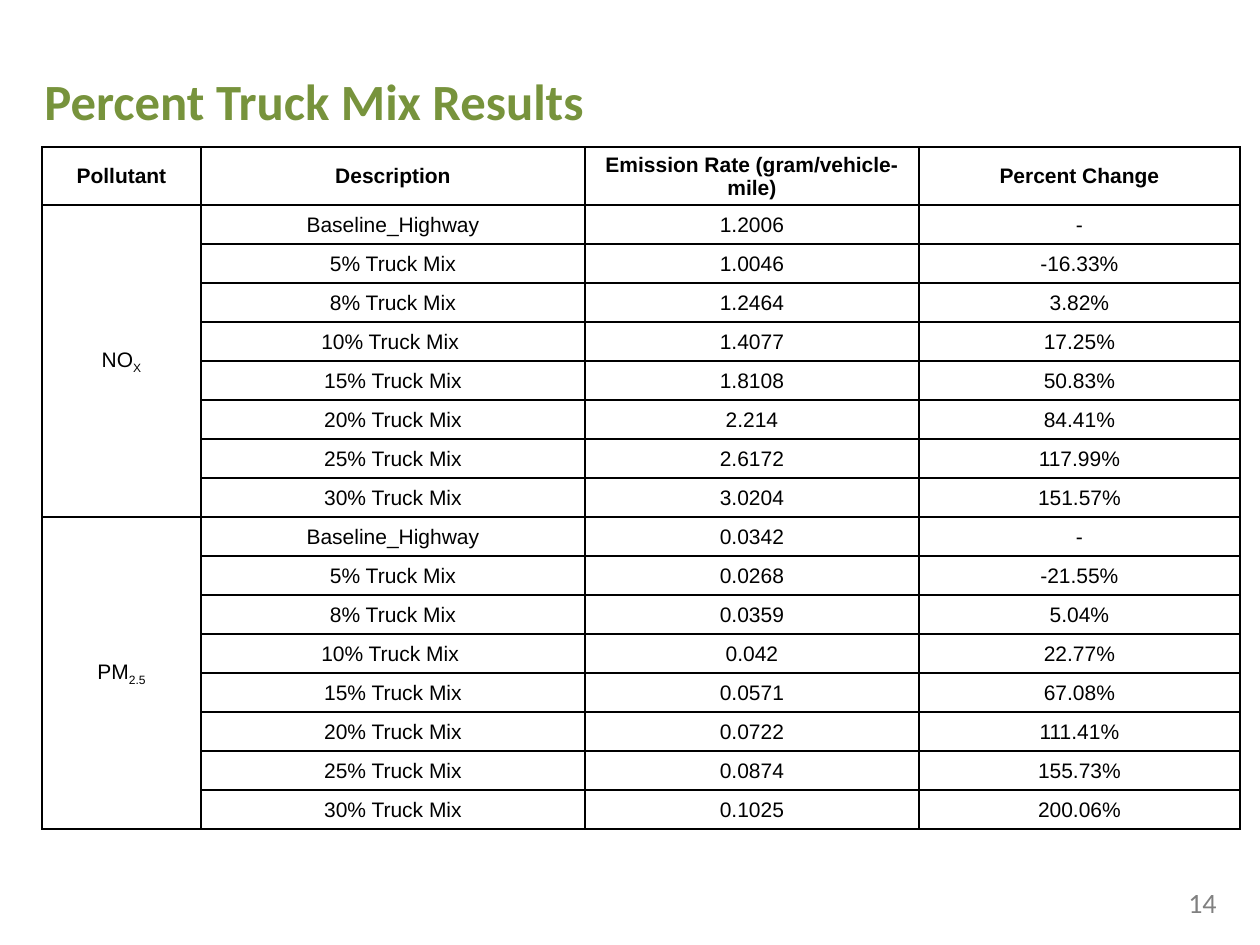
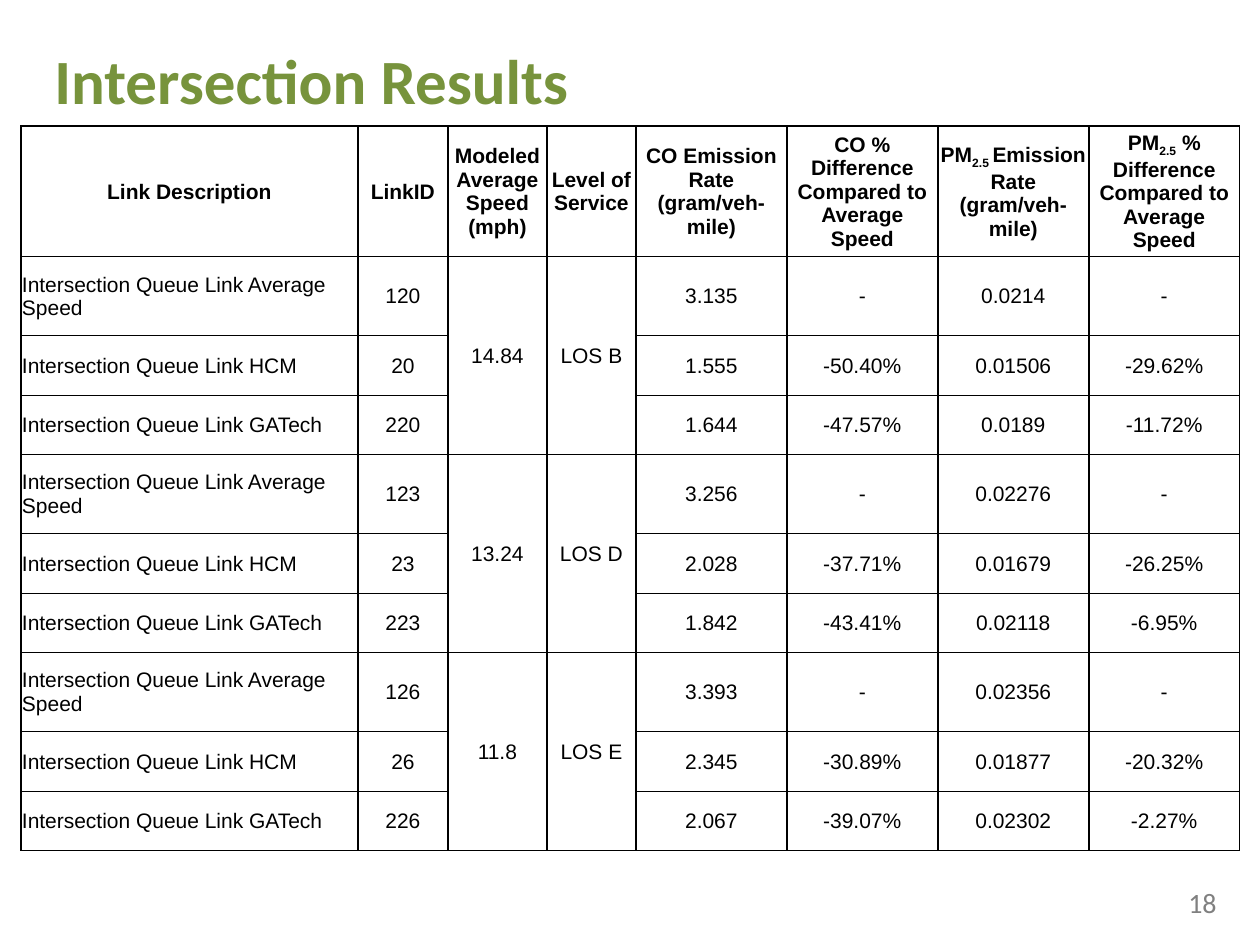
from dataclasses import dataclass
from lxml.etree import SubElement
from pptx import Presentation
from pptx.dml.color import RGBColor
from pptx.enum.text import MSO_ANCHOR as Anchor, PP_ALIGN as Align
from pptx.oxml.ns import qn
from pptx.util import Pt

# Text between tildes is set as a subscript.
TRUCK_MIX = {
    "title": "Percent Truck Mix Results",
    "title_box": (32, 21, 1166, 158),
    "title_size": 29,
    "page_number": "14",
    "origin": (42, 147),
    "columns": [159, 384, 334, 321],
    "rows": [58] + [39] * 16,
    "header": ["Pollutant", "Description",
               "Emission Rate (gram/vehicle-mile)", "Percent Change"],
    "left_columns": (),
    "merged_columns": (0,),
    "group_size": 8,
}
MIXES = ["Baseline_Highway", "5% Truck Mix", "8% Truck Mix", "10% Truck Mix ",
         "15% Truck Mix", "20% Truck Mix", "25% Truck Mix", "30% Truck Mix"]
MIX_RESULTS = {
    "NO~X~": [
        ("1.2006", "-"), ("1.0046", "-16.33%"), ("1.2464", "3.82%"),
        ("1.4077", "17.25%"), ("1.8108", "50.83%"), ("2.214", "84.41%"),
        ("2.6172", "117.99%"), ("3.0204", "151.57%"),
    ],
    "PM~2.5~": [
        ("0.0342", "-"), ("0.0268", "-21.55%"), ("0.0359", "5.04%"),
        ("0.042", "22.77%"), ("0.0571", "67.08%"), ("0.0722", "111.41%"),
        ("0.0874", "155.73%"), ("0.1025", "200.06%"),
    ],
}

INTERSECTION = {
    "title": "Intersection Results",
    "title_box": (42, 0, 1197, 158),
    "title_size": 36,
    "page_number": "18",
    "origin": (21, 126),
    "columns": [337, 90, 99, 89] + [151] * 4,
    "rows": [122] + [79, 60, 59] * 3,
    "header": ["Link Description", "LinkID", "Modeled Average Speed (mph)",
               "Level of Service", "CO Emission Rate (gram/veh-mile)",
               "CO % Difference Compared to Average Speed",
               "PM~2.5 ~Emission Rate (gram/veh-mile)",
               "PM~2.5~ % Difference Compared to Average Speed"],
    "left_columns": (0,),
    "merged_columns": (2, 3),
    "group_size": 3,
}
LINKS = ["Intersection Queue Link Average Speed",
         "Intersection Queue Link HCM", "Intersection Queue Link GATech"]
LINK_RESULTS = {
    ("14.84", "LOS B"): [
        ("120", "3.135", "-", "0.0214", "-"),
        ("20", "1.555", "-50.40%", "0.01506", "-29.62%"),
        ("220", "1.644", "-47.57%", "0.0189", "-11.72%"),
    ],
    ("13.24", "LOS D"): [
        ("123", "3.256", "-", "0.02276", "-"),
        ("23", "2.028", "-37.71%", "0.01679", "-26.25%"),
        ("223", "1.842", "-43.41%", "0.02118", "-6.95%"),
    ],
    ("11.8", "LOS E"): [
        ("126", "3.393", "-", "0.02356", "-"),
        ("26", "2.345", "-30.89%", "0.01877", "-20.32%"),
        ("226", "2.067", "-39.07%", "0.02302", "-2.27%"),
    ],
}

SLIDE_SIZE = (1260, 945)
PAGE_NUMBER_BOX = (1176, 879, 63, 46)
CELL_INSET = 1


@dataclass(frozen=True)
class Theme:
    heading_font: str = "Calibri"
    table_font: str = "Arial"
    green: str = "77933C"
    gray: str = "808080"
    black: str = "000000"
    number_size: int = 16
    table_size: int = 12
    border: int = 1


THEME = Theme()


def px(length):
    return round(length * 914400 / 126)


def add_span(para, text, font, size, color, bold=False):
    span = para.add_run()
    span.text = text
    span.font.name = font
    span.font.size = Pt(size)
    span.font.bold = bold
    span.font.color.rgb = RGBColor.from_string(color)
    return span


def add_label(page, place, text, size, color, bold=False, anchor=Anchor.TOP):
    box = page.shapes.add_textbox(*map(px, place))
    frame = box.text_frame
    frame.word_wrap = True
    frame.vertical_anchor = anchor
    add_span(frame.paragraphs[0], text, THEME.heading_font, size, color, bold)


def add_borders(cell):
    properties = cell._tc.get_or_add_tcPr()
    for index, side in enumerate(("a:lnL", "a:lnR", "a:lnT", "a:lnB")):
        line = SubElement(properties, qn(side), w=str(Pt(THEME.border)))
        fill = SubElement(line, qn("a:solidFill"))
        SubElement(fill, qn("a:srgbClr"), val=THEME.black)
        properties.insert(index, line)


def write_cell(cell, text, bold, align):
    cell.vertical_anchor = Anchor.MIDDLE
    para = cell.text_frame.paragraphs[0]
    para.alignment = align
    for index, part in enumerate(text.split("~")):
        if part:
            span = add_span(para, part, THEME.table_font, THEME.table_size,
                            THEME.black, bold)
            if index % 2:
                span.font._element.set("baseline", "-25000")


def add_results_table(page, content, records):
    columns, rows = content["columns"], content["rows"]
    place = (*content["origin"], sum(columns), sum(rows))
    table = page.shapes.add_table(len(rows), len(columns), *map(px, place)).table
    table.first_row = table.horz_banding = False
    for column, width in zip(table.columns, columns):
        column.width = px(width)
    for row, height in zip(table.rows, rows):
        row.height = px(height)

    group_size = content["group_size"]
    for row_index, record in enumerate([content["header"]] + records):
        is_header = row_index == 0
        starts_group = not is_header and (row_index - 1) % group_size == 0
        for column_index, text in enumerate(record):
            cell = table.cell(row_index, column_index)
            cell.margin_left = cell.margin_right = cell.margin_top = px(CELL_INSET)
            cell.margin_bottom = 0
            cell.fill.background()
            add_borders(cell)
            merged = column_index in content["merged_columns"]
            if merged and starts_group:
                cell.merge(table.cell(row_index + group_size - 1, column_index))
            if is_header or starts_group or not merged:
                is_left = column_index in content["left_columns"] and not is_header
                write_cell(cell, text, is_header,
                           Align.LEFT if is_left else Align.CENTER)


def add_results_page(deck, content, records):
    page = deck.slides.add_slide(deck.slide_layouts[6])
    add_label(page, PAGE_NUMBER_BOX, content["page_number"],
              THEME.number_size, THEME.gray)
    add_label(page, content["title_box"], content["title"],
              content["title_size"], THEME.green, True, Anchor.MIDDLE)
    add_results_table(page, content, records)


def main():
    deck = Presentation()
    deck.slide_width, deck.slide_height = map(px, SLIDE_SIZE)
    mix_records = [(pollutant, mix, *values)
                   for pollutant, results in MIX_RESULTS.items()
                   for mix, values in zip(MIXES, results)]
    link_records = [(link, link_id, *service, *values)
                    for service, results in LINK_RESULTS.items()
                    for link, (link_id, *values) in zip(LINKS, results)]
    add_results_page(deck, TRUCK_MIX, mix_records)
    add_results_page(deck, INTERSECTION, link_records)
    deck.save("out.pptx")


if __name__ == "__main__":
    main()
